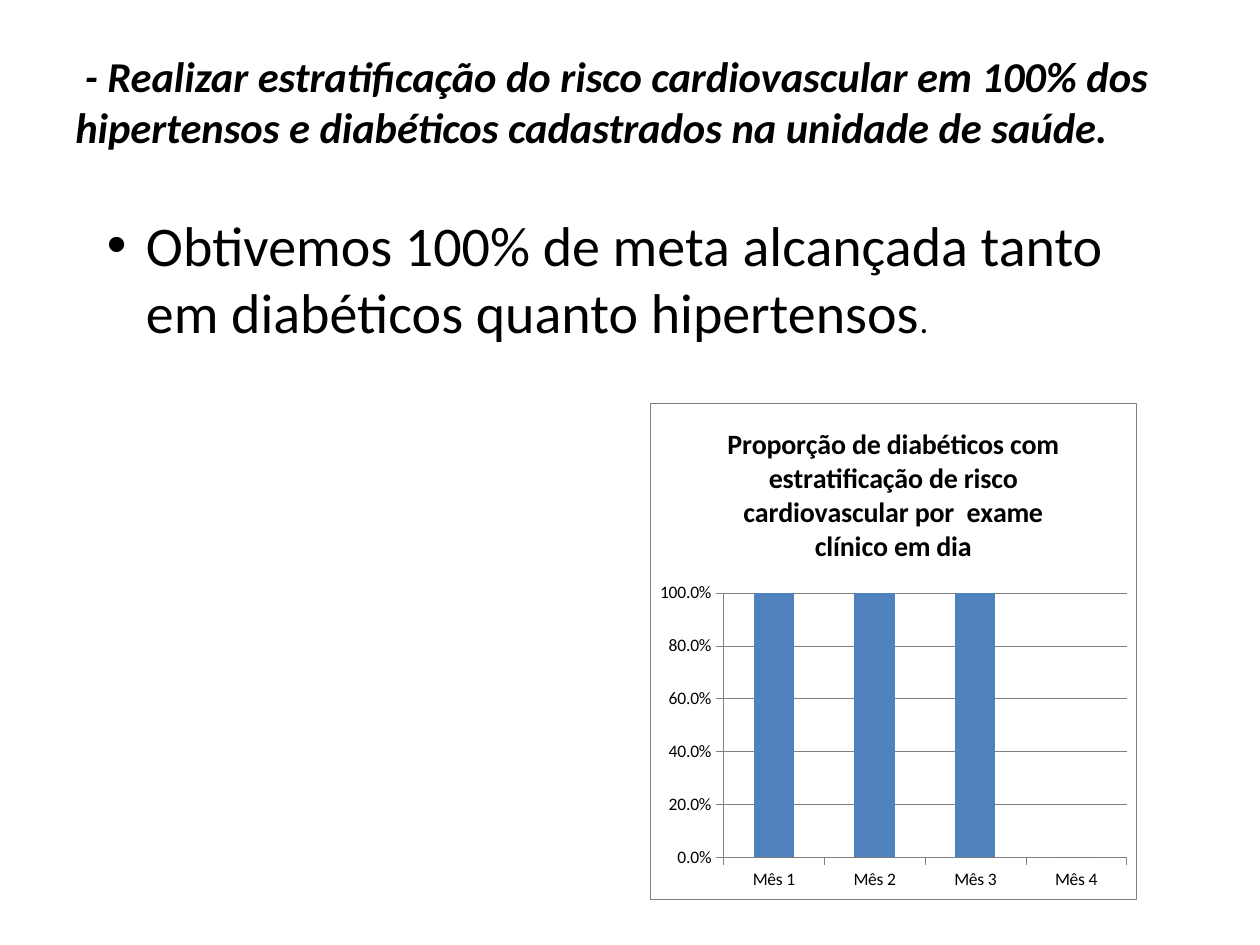
from pptx import Presentation
from pptx.chart.data import CategoryChartData
from pptx.dml.color import RGBColor
from pptx.enum.chart import XL_CHART_TYPE, XL_TICK_MARK
from pptx.enum.text import MSO_ANCHOR
from pptx.oxml import parse_xml
from pptx.oxml.ns import nsdecls
from pptx.util import Inches, Pt

BLACK = RGBColor(0, 0, 0)
GRAY = RGBColor(0x80, 0x80, 0x80)
BLUE = RGBColor(0x4F, 0x81, 0xBD)
WHITE = RGBColor(0xFF, 0xFF, 0xFF)
HEAD = "Proporção de diabéticos com estratificação de risco cardiovascular por  exame clínico em dia"


def style(font, **extra):
    """Set Calibri, black and any further font attributes."""
    for key, val in {"name": "Calibri", **extra}.items():
        setattr(font, key, val)
    font.color.rgb = BLACK


def add_text(slide, box, runs):
    """Add a wrapped text box holding one paragraph of styled runs."""
    frame = slide.shapes.add_textbox(*map(Inches, box)).text_frame
    frame.word_wrap = True
    frame.vertical_anchor = MSO_ANCHOR.TOP
    for text, form in runs:
        run = frame.paragraphs[0].add_run()
        run.text = text
        style(run.font, **form)
    return frame


deck = Presentation()
deck.slide_width, deck.slide_height = Inches(10), Inches(7.5)
slide = deck.slides.add_slide(deck.slide_layouts[6])

# Heading
title = add_text(slide, (0.5, 0.3, 9, 1.25), [
    (" - Realizar estratificação do risco cardiovascular em 100% dos "
     "hipertensos e diabéticos cadastrados na unidade de saúde.",
     {"size": Pt(24.3), "bold": True, "italic": True})])
title.margin_top = Inches(0.1)

# Chart
data = CategoryChartData(number_format="0.0%")
data.categories = [f"Mês {n}" for n in range(1, 5)]
data.add_series(HEAD, (1, 1, 1, 0))
chart = slide.shapes.add_chart(
    XL_CHART_TYPE.COLUMN_CLUSTERED,
    *map(Inches, (5.16, 3.2, 3.86, 3.94)), data).chart
style(chart.font, size=Pt(10))
chart.has_legend = False
chart.has_title = True
frame = chart.chart_title.text_frame
frame.text = HEAD
style(frame.paragraphs[0].runs[0].font, size=Pt(16), bold=True)

plot = chart.plots[0]
plot.gap_width = 150
plot.vary_by_categories = False
fill = plot.series[0].format.fill
fill.solid()
fill.fore_color.rgb = BLUE

scale = chart.value_axis
form = {"minimum_scale": 0, "maximum_scale": 1, "major_unit": 0.2,
        "has_major_gridlines": True}
for key, val in form.items():
    setattr(scale, key, val)
scale.tick_labels.number_format = "0.0%"
scale.tick_labels.number_format_is_linked = False
for axis in (chart.category_axis, scale):
    axis.major_tick_mark = XL_TICK_MARK.OUTSIDE
    axis.minor_tick_mark = XL_TICK_MARK.NONE
    style(axis.tick_labels.font, size=Pt(10))
for item in (chart.category_axis, scale, scale.major_gridlines):
    item.format.line.color.rgb = GRAY
    item.format.line.width = Pt(0.25)

# White chart and plot areas, the chart with a thin gray border
solid = '<a:solidFill><a:srgbClr val="{}"/></a:solidFill>'
edge = f'<a:ln w="{Pt(0.25)}">{solid.format(GRAY)}</a:ln>'
area, field = (
    parse_xml(f'<c:spPr {nsdecls("c", "a")}>{solid.format(WHITE)}{line}</c:spPr>')
    for line in (edge, ""))
root = chart._chartSpace
root.chart.addnext(area)
root.chart.plotArea.append(field)

# Bullet
body = add_text(slide, (0.75, 1.62, 8.19, 1.48), [
    ("Obtivemos 100% de meta alcançada tanto em diabéticos quanto hipertensos",
     {"size": Pt(32)}),
    (".", {"size": Pt(20)})])
props = body.paragraphs[0]._p.get_or_add_pPr()
props.set("marL", str(Inches(0.31)))
props.set("indent", str(-Inches(0.31)))
for tag in ('buFont {} typeface="Arial"', 'buChar {} char="•"'):
    props.append(parse_xml(f'<a:{tag.format(nsdecls("a"))}/>'))

deck.save("out.pptx")
